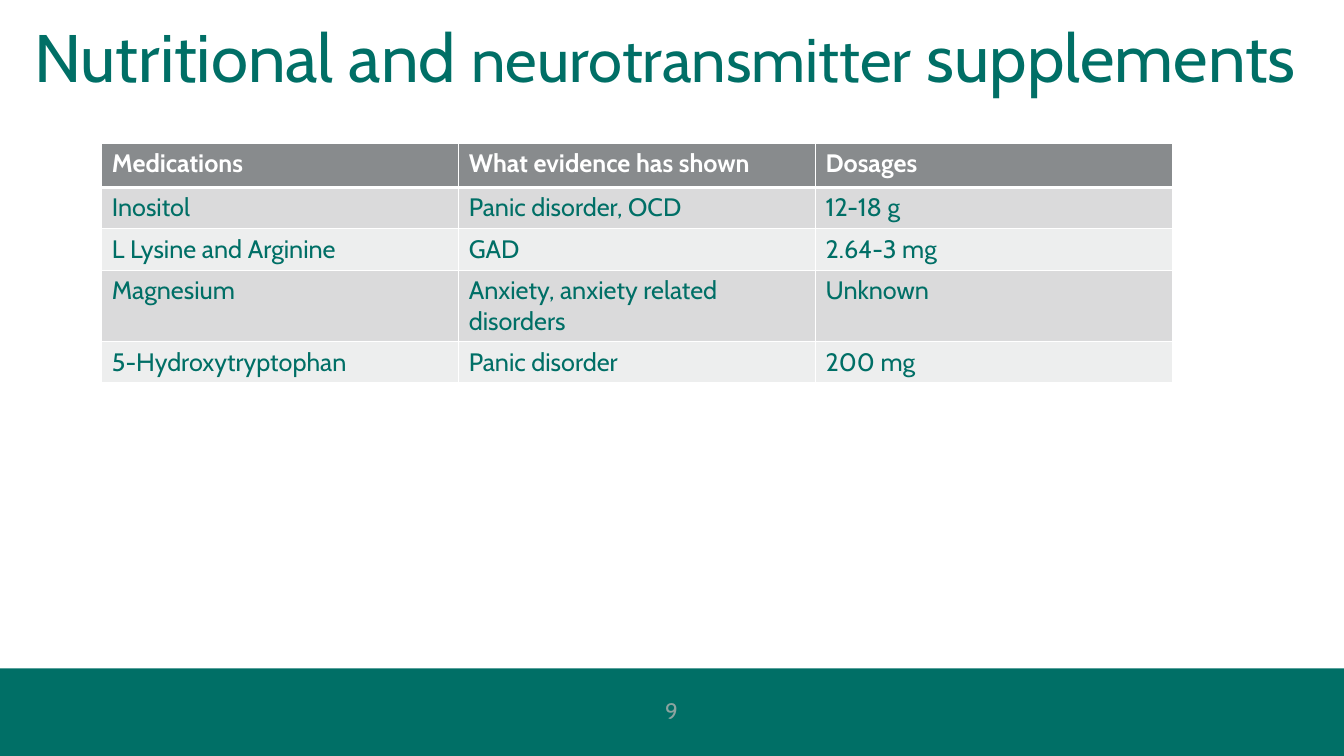
from lxml import etree
from pptx import Presentation
from pptx.dml.color import RGBColor
from pptx.enum.shapes import MSO_SHAPE
from pptx.enum.text import MSO_ANCHOR, PP_ALIGN
from pptx.oxml.ns import qn
from pptx.util import Inches, Pt

RECT = MSO_SHAPE.RECTANGLE
MIDDLE = MSO_ANCHOR.MIDDLE
CENTER = PP_ALIGN.CENTER

FONT = "Cabin"
GREEN, WHITE, PALE = "006F66", "FFFFFF", "8CA4A0"
HEAD, BANDS = "888B8D", ("DADADB", "EDEEEE")

TITLE = [("Nutritional and ", 48), ("neurotransmitter", 44), (" supplements", 48)]
NUMBER = "9"
ROWS = [
    ("Medications", "What evidence has shown", "Dosages"),
    ("Inositol", "Panic disorder, OCD", "12-18 g"),
    ("L Lysine and Arginine", "GAD", "2.64-3 mg"),
    ("Magnesium", "Anxiety, anxiety related disorders", "Unknown"),
    ("5-Hydroxytryptophan", "Panic disorder", "200 mg"),
]
HEIGHTS = [0.44, 0.41, 0.41, 0.71, 0.41]
COL = 3.54


def paint(target, color):
    target.solid()
    target.fore_color.rgb = RGBColor.from_string(color)


def add_run(para, text, size, color, bold=False):
    run = para.add_run()
    run.text = text
    run.font.name = FONT
    run.font.size = Pt(size)
    run.font.bold = bold
    paint(run.font.fill, color)


def add_box(slide, left, top, width, height):
    frame = slide.shapes.add_textbox(
        Inches(left), Inches(top), Inches(width), Inches(height)).text_frame
    frame.word_wrap = True
    return frame


def add_edges(cell, bottom):
    """Draw white cell borders, with the bottom one of the given width."""
    props = cell._tc.get_or_add_tcPr()
    for i, (side, width) in enumerate(
            [("L", 1), ("R", 1), ("T", 1), ("B", bottom)]):
        line = etree.Element(qn("a:ln" + side), w=str(Pt(width)))
        fill = etree.SubElement(line, qn("a:solidFill"))
        etree.SubElement(fill, qn("a:srgbClr"), val=WHITE)
        props.insert(i, line)


def main():
    prs = Presentation()
    prs.slide_width, prs.slide_height = Inches(13.33), Inches(7.5)
    slide = prs.slides.add_slide(prs.slide_layouts[6])

    band = slide.shapes.add_shape(
        RECT, 0, Inches(6.63), prs.slide_width, Inches(0.87))
    band.shadow.inherit = False
    paint(band.fill, GREEN)
    band.line.fill.background()

    number = add_box(slide, 5.16, 6.85, 3, 0.4)
    number.vertical_anchor = MIDDLE
    number.paragraphs[0].alignment = CENTER
    add_run(number.paragraphs[0], NUMBER, 16, PALE)

    title = add_box(slide, 0.24, 0.1, 13, 0.88)
    for text, size in TITLE:
        add_run(title.paragraphs[0], text, size, GREEN)

    table = slide.shapes.add_table(
        len(ROWS), len(ROWS[0]), Inches(1.01), Inches(1.42),
        Inches(COL * len(ROWS[0])), Inches(sum(HEIGHTS))).table
    for col in table.columns:
        col.width = Inches(COL)
    for r, texts in enumerate(ROWS):
        table.rows[r].height = Inches(HEIGHTS[r])
        top = r == 0
        for c, text in enumerate(texts):
            cell = table.cell(r, c)
            paint(cell.fill, HEAD if top else BANDS[(r - 1) % 2])
            add_edges(cell, 3 if top else 1)
            add_run(cell.text_frame.paragraphs[0], text, 18,
                    WHITE if top else GREEN, top)

    prs.save("out.pptx")


if __name__ == "__main__":
    main()
